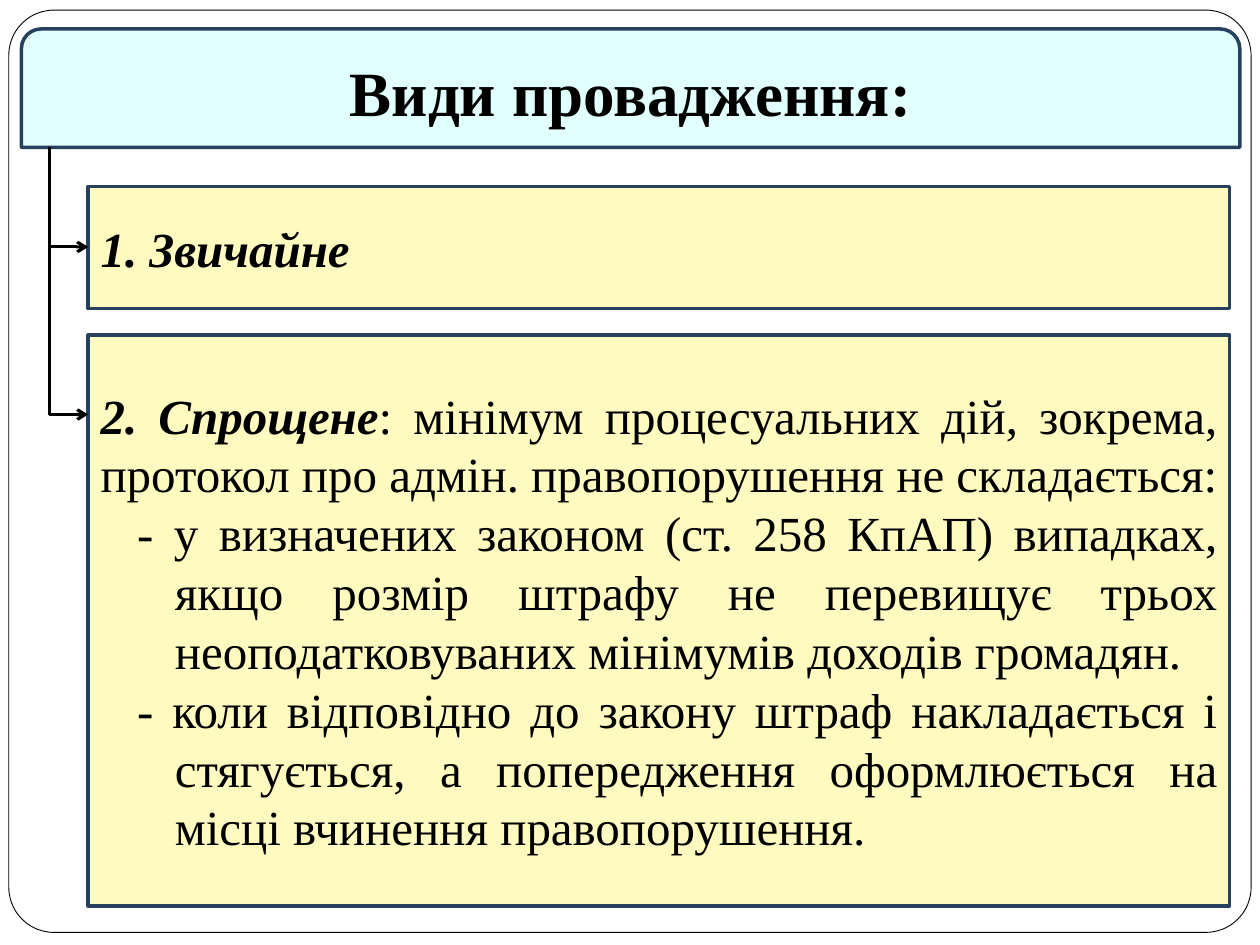
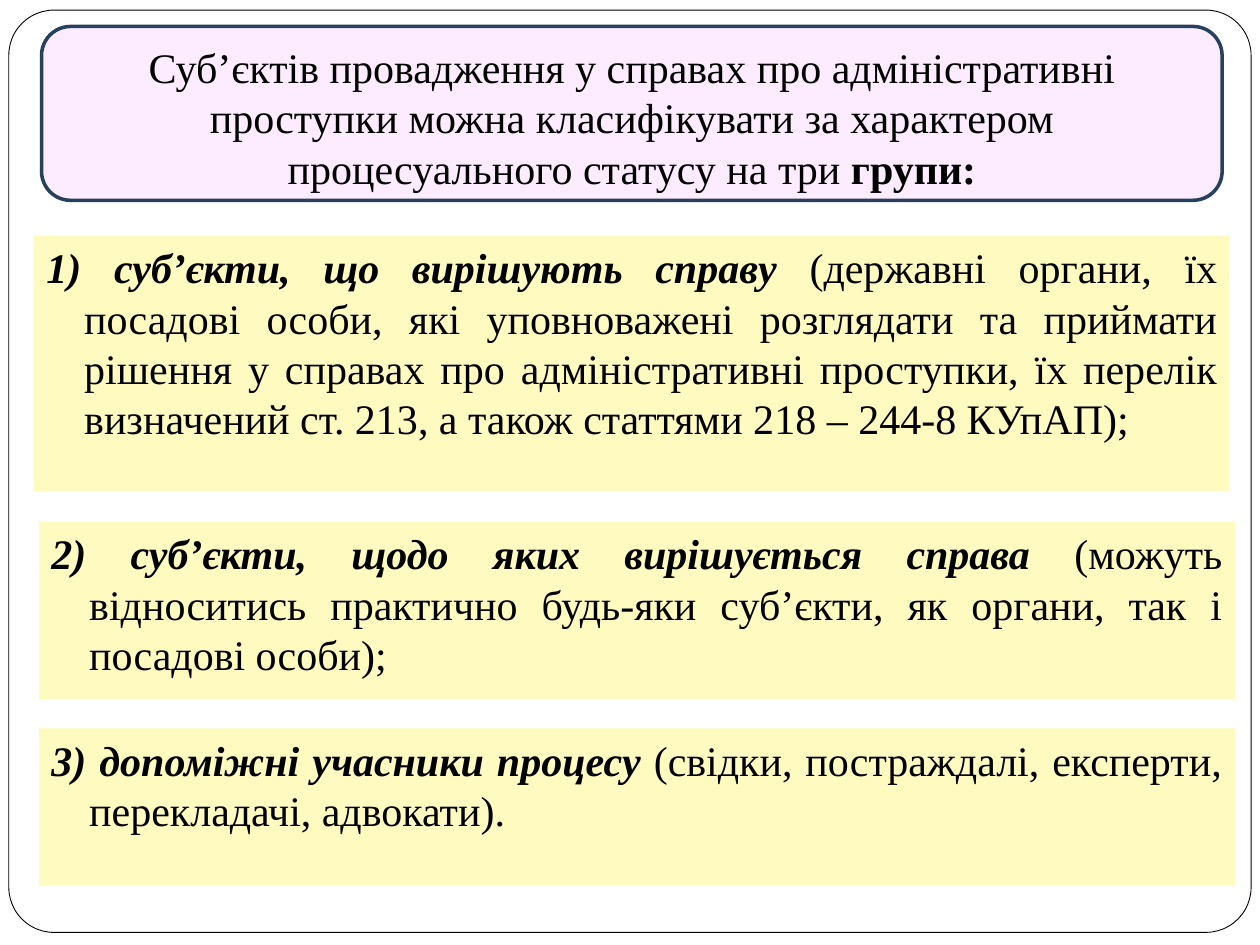
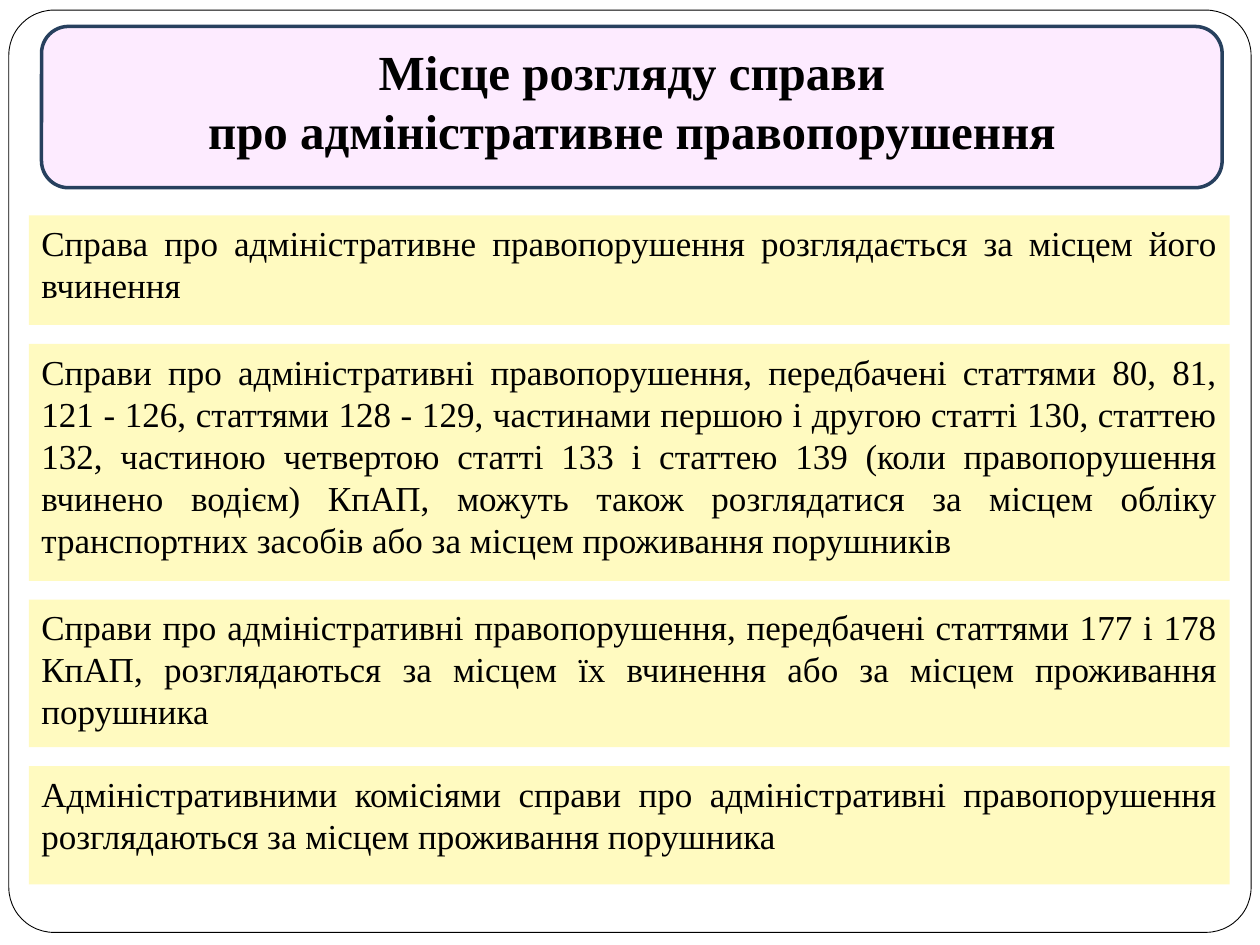
import lxml.etree
import pptx
import pptx.dml.color
import pptx.enum.shapes
import pptx.enum.text
import pptx.oxml.ns
import pptx.util

Inches = pptx.util.Inches
Pt = pptx.util.Pt
SHAPE = pptx.enum.shapes.MSO_SHAPE
ALIGN = pptx.enum.text.PP_ALIGN
ANCHOR = pptx.enum.text.MSO_ANCHOR
qn = pptx.oxml.ns.qn
rgb = pptx.dml.color.RGBColor.from_string

COLORS = {
    "text": "000000",
    "page": "FFFFFF",
    "border": "27405E",
    "panel": "FFFAC0",
    "cyan": "E1FFFC",
    "pink": "FDEBFF",
}
FONT = "Times New Roman"


def add_box(slide, kind, box, fill, line=None, width=2):
    sp = slide.shapes.add_shape(kind, *[Inches(v) for v in box])
    sp.shadow.inherit = False
    sp.fill.solid()
    sp.fill.fore_color.rgb = rgb(COLORS[fill])
    if line:
        sp.line.color.rgb = rgb(COLORS[line])
        sp.line.width = Pt(width)
    else:
        sp.line.fill.background()
    sp.text_frame.word_wrap = True
    sp.text_frame.vertical_anchor = ANCHOR.TOP
    return sp


def write(tf, runs, size=20, align=ALIGN.JUSTIFY, left=0, hang=0, before=0):
    """Add one paragraph; runs are (text, style) pairs, style "b" bold, "i" italic."""
    p = tf.paragraphs[0] if not tf.paragraphs[0].runs else tf.add_paragraph()
    p.alignment = align
    p.space_before = Pt(before)
    if left:
        pPr = p._p.get_or_add_pPr()
        pPr.set("marL", str(Inches(left)))
        pPr.set("indent", str(-Inches(hang)))
    for text, style in runs:
        r = p.add_run()
        r.text = text
        r.font.name = FONT
        r.font.size = Pt(size)
        r.font.bold = "b" in style
        r.font.italic = "i" in style
        r.font.color.rgb = rgb(COLORS["text"])


prs = pptx.Presentation()
prs.slide_width = Inches(10)
prs.slide_height = Inches(7.5)
layout = prs.slide_layouts[5]

# Title bands: shape, box, fill, size, anchor, margins (side, top, bottom), paragraphs
titles = [
    (SHAPE.ROUND_2_SAME_RECTANGLE, (0.17, 0.23, 9.67, 0.94), "cyan", 36,
     ANCHOR.MIDDLE, (0.15, 0.1, 0.05), [[("Види провадження:", "b")]]),
    (SHAPE.ROUNDED_RECTANGLE, (0.33, 0.21, 9.37, 1.38), "pink", 24,
     ANCHOR.TOP, (0.17, 0.12, 0.05),
     [[("Суб’єктів провадження у справах про адміністративні проступки можна "
        "класифікувати за характером процесуального статусу на три ", ""),
       ("групи:", "b")]]),
    (SHAPE.ROUNDED_RECTANGLE, (0.33, 0.21, 9.37, 1.28), "pink", 28,
     ANCHOR.TOP, (0.17, 0.12, 0.05),
     [[("Місце розгляду справи", "b")],
      [("про адміністративне правопорушення", "b")]]),
]
slides = []
for kind, box, fill, size, anchor, (side, top, bottom), paragraphs in titles:
    s = prs.slides.add_slide(layout)
    slides.append(s)
    title = s.shapes.title
    title.left, title.top, title.width, title.height = [Inches(v) for v in box]
    band = add_box(s, kind, box, fill, "border")
    title.element.addprevious(band.element)
    tf = title.text_frame
    tf.word_wrap = True
    tf.auto_size = pptx.enum.text.MSO_AUTO_SIZE.NONE
    tf.vertical_anchor = anchor
    tf.margin_left = tf.margin_right = Inches(side)
    tf.margin_top, tf.margin_bottom = Inches(top), Inches(bottom)
    for runs in paragraphs:
        write(tf, runs, size=size, align=ALIGN.CENTER)

# The page frame belongs to the layout, behind its placeholders
frame = add_box(slides[0], SHAPE.ROUNDED_RECTANGLE, (0.07, 0.08, 9.86, 7.32),
                "page", "text", 0.5)
frame.adjustments[0] = 0.049
layout.element.cSld.spTree.insert(2, frame.element)

# Slide 1: kinds of proceedings
s = slides[0]
usual = add_box(s, SHAPE.RECTANGLE, (0.7, 1.48, 9.06, 0.97), "panel", "border")
simple = add_box(s, SHAPE.RECTANGLE, (0.7, 2.66, 9.06, 4.53), "panel", "border")
for sp in (usual, simple):
    sp.text_frame.vertical_anchor = ANCHOR.MIDDLE
write(usual.text_frame, [("1. Звичайне", "bi")], size=28)
write(simple.text_frame,
      [("2. Спрощене", "bi"),
       (": мінімум процесуальних дій, зокрема, протокол про адмін. "
        "правопорушення не складається:", "")], size=28)
cases = [
    "- у визначених законом (ст. 258 КпАП) випадках, якщо розмір штрафу не "
    "перевищує трьох неоподатковуваних мінімумів доходів громадян.",
    "- коли відповідно до закону штраф накладається і стягується, а попередження "
    "оформлюється на місці вчинення правопорушення.",
]
for case in cases:
    write(simple.text_frame, [(case, "")], size=28, left=0.59, hang=0.3)

trunk_x = 0.39
connectors = [
    (trunk_x, 1.17, trunk_x, 3.29, False),
    (trunk_x, 1.96, 0.7, 1.96, True),
    (trunk_x, 3.29, 0.7, 3.29, True),
]
for *ends, arrow in connectors:
    line = s.shapes.add_connector(pptx.enum.shapes.MSO_CONNECTOR.STRAIGHT,
                                  *[Inches(v) for v in ends])
    line.line.color.rgb = rgb(COLORS["text"])
    line.line.width = Pt(1.75)
    if arrow:
        lxml.etree.SubElement(line.line._get_or_add_ln(), qn("a:tailEnd"), type="arrow")
    lxml.etree.SubElement(line.element.spPr, qn("a:effectLst"))

# Slide 2: groups of participants
groups = [
    ((0.27, 1.87, 9.49, 2.03), "1) суб’єкти, що вирішують справу",
     " (державні органи, їх посадові особи, які уповноважені розглядати та приймати "
     "рішення у справах про адміністративні проступки, їх перелік визначений ст. 213, "
     "а також статтями 218 – 244-8 КУпАП);"),
    ((0.31, 4.14, 9.49, 1.41), "2) суб’єкти, щодо яких вирішується справа",
     " (можуть відноситись практично будь-яки суб’єкти, як органи, так i посадові особи);"),
    ((0.31, 5.78, 9.49, 1.25), "3) допоміжні учасники процесу",
     " (свідки, постраждалі, експерти, перекладачі, адвокати)."),
]
for box, name, members in groups:
    sp = add_box(slides[1], SHAPE.RECTANGLE, box, "panel")
    write(sp.text_frame, [(name, "bi"), (members, "")],
          size=24, left=0.3, hang=0.3, before=5.8)

# Slide 3: places of hearing, stacked with an equal gap
places = [
    (0.87, "Справа про адміністративне правопорушення розглядається за місцем його вчинення"),
    (1.88, "Справи про адміністративні правопорушення, передбачені статтями 80, 81, "
           "121 - 126, статтями 128 - 129, частинами першою і другою статті 130, статтею "
           "132, частиною четвертою статті 133 і статтею 139 (коли правопорушення вчинено "
           "водієм) КпАП, можуть також розглядатися за місцем обліку транспортних засобів "
           "або за місцем проживання порушників"),
    (1.17, "Справи про адміністративні правопорушення, передбачені статтями 177 і 178 "
           "КпАП, розглядаються за місцем їх вчинення або за місцем проживання порушника"),
    (0.94, "Адміністративними комісіями справи про адміністративні правопорушення "
           "розглядаються за місцем проживання порушника"),
]
top = 1.71
for height, rule in places:
    sp = add_box(slides[2], SHAPE.RECTANGLE, (0.23, top, 9.53, height), "panel")
    write(sp.text_frame, [(rule, "")], before=5.8)
    top += height + 0.15

prs.save("out.pptx")
